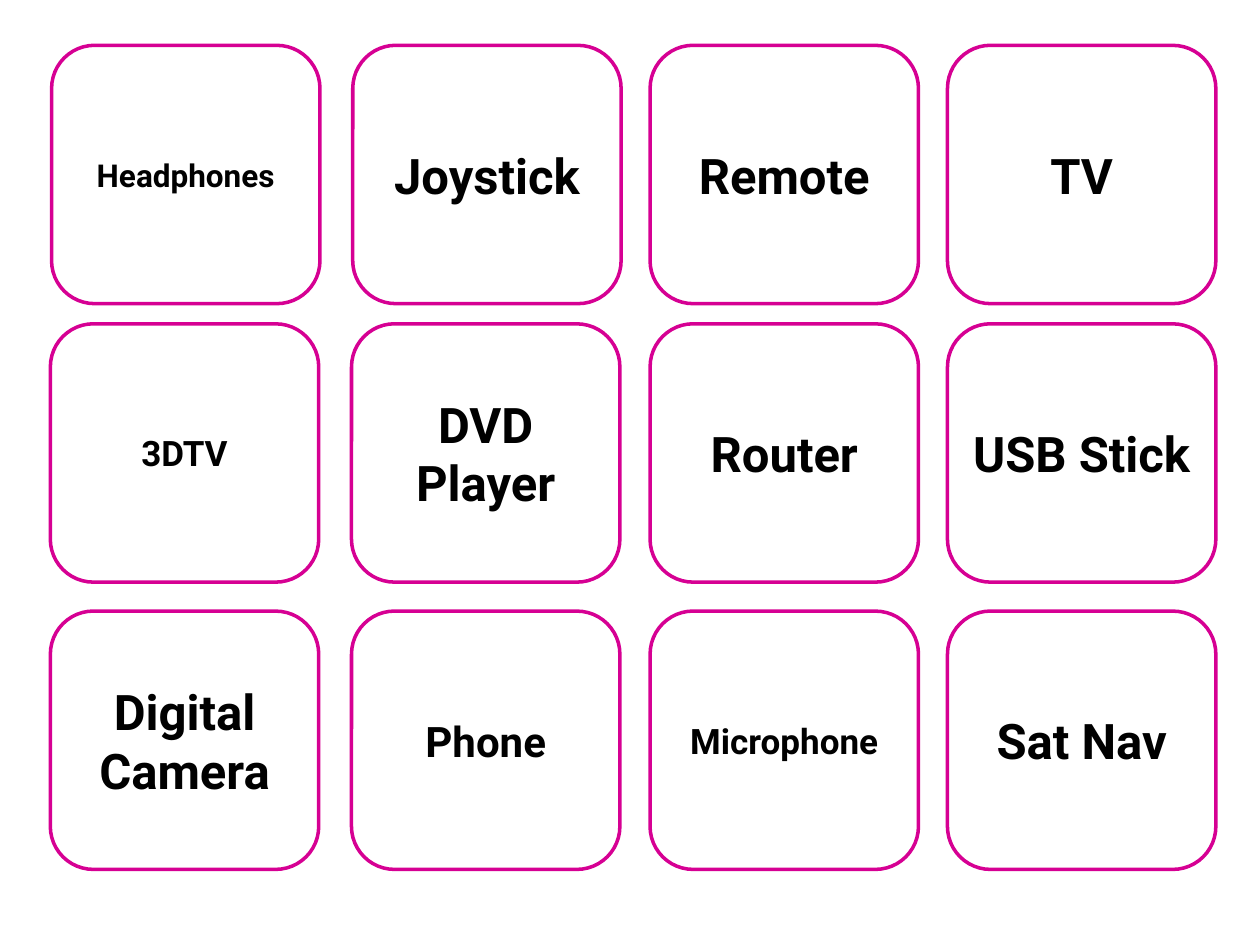
from pptx import Presentation
from pptx.dml.color import RGBColor
from pptx.enum import shapes, text
from pptx.util import Inches, Pt

COLORS = {"fill": "FFFFFF", "border": "D60093", "text": "000000"}
CARD_WIDTH, CARD_HEIGHT = 2.13, 2.05
COLUMN_LEFTS = [0.4, 2.79, 5.16, 7.52]
TOP_ROW_LEFTS = [0.41, 2.8, 5.16, 7.52]
ROW_TOPS = [0.36, 2.57, 4.85]

# Each row lists its cards as (label, font size)
CARD_ROWS = [
    [("Headphones", 18), ("Joystick", 28), ("Remote", 28), ("TV", 28)],
    [("3DTV", 20), ("DVD Player", 28), ("Router", 28), ("USB Stick", 28)],
    [("Digital Camera", 28), ("Phone", 24), ("Microphone", 20), ("Sat Nav", 28)],
]

presentation = Presentation()
presentation.slide_width = Inches(10)
presentation.slide_height = Inches(7.5)
slide = presentation.slides.add_slide(presentation.slide_layouts[6])

for row, (top, cards) in enumerate(zip(ROW_TOPS, CARD_ROWS)):
    lefts = TOP_ROW_LEFTS if row == 0 else COLUMN_LEFTS
    for left, (label, size) in zip(lefts, cards):
        card = slide.shapes.add_shape(
            shapes.MSO_SHAPE.ROUNDED_RECTANGLE,
            Inches(left), Inches(top), Inches(CARD_WIDTH), Inches(CARD_HEIGHT),
        )
        card.shadow.inherit = False
        card.fill.solid()
        card.fill.fore_color.rgb = RGBColor.from_string(COLORS["fill"])
        card.line.color.rgb = RGBColor.from_string(COLORS["border"])
        card.line.width = Pt(2)

        frame = card.text_frame
        frame.word_wrap = True
        frame.margin_left = frame.margin_right = Inches(0.05)
        frame.vertical_anchor = text.MSO_ANCHOR.MIDDLE
        paragraph = frame.paragraphs[0]
        paragraph.text = label
        paragraph.alignment = text.PP_ALIGN.CENTER
        paragraph.font.name = "Roboto"
        paragraph.font.size = Pt(size)
        paragraph.font.bold = True
        paragraph.font.color.rgb = RGBColor.from_string(COLORS["text"])

presentation.save("out.pptx")
